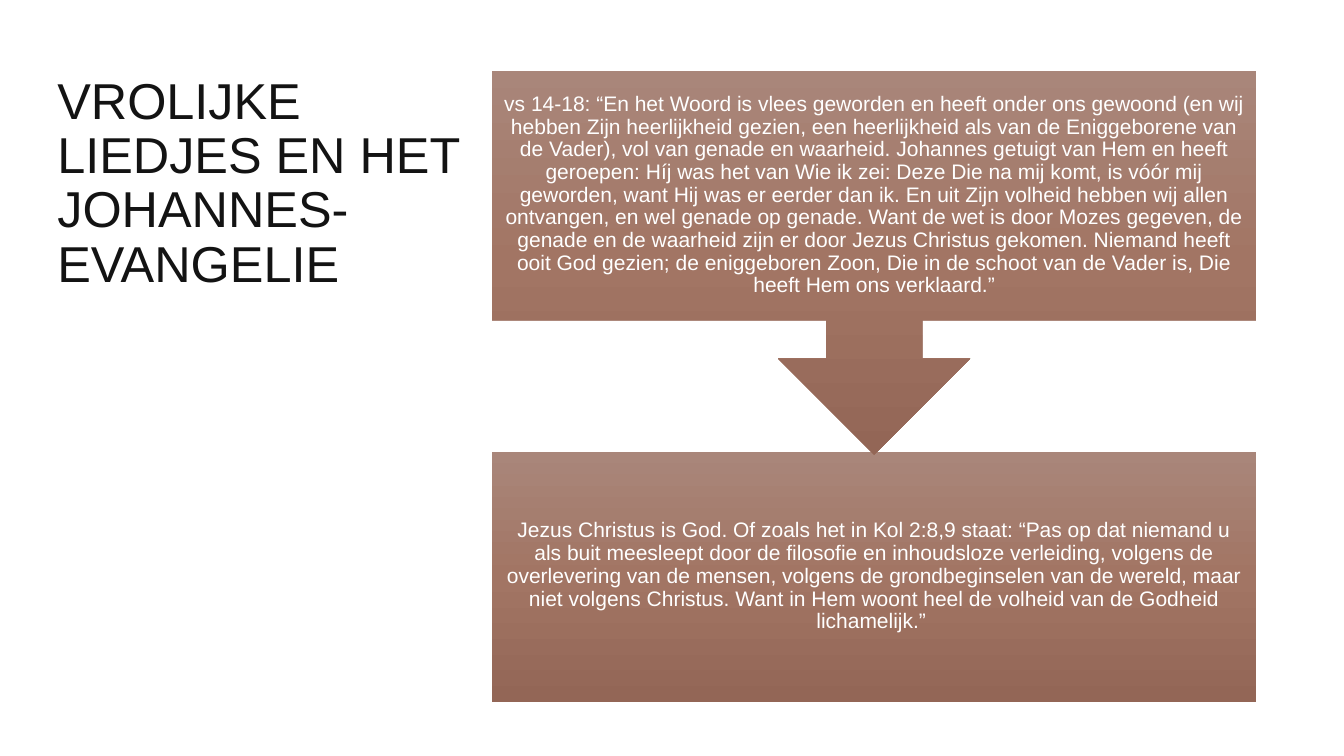
from copy import deepcopy

from pptx import Presentation
from pptx.dml.color import RGBColor
from pptx.enum import shapes, text
from pptx.oxml.ns import qn
from pptx.util import Inches, Pt

COLORS = {"title": "131313", "text": "FFFFFF",
          "light": "A9867A", "mid": "A27564", "dark": "936656"}

prs = Presentation()
prs.slide_width, prs.slide_height = Inches(13.33), Inches(7.5)
s = prs.slides.add_slide(prs.slide_layouts[6])


def write(tf, words, size, color, align):
    tf.word_wrap = True
    p = tf.paragraphs[0]
    p.text = words
    p.alignment = align
    p.line_spacing = 0.9
    p.font.name = "Arial"
    p.font.size = Pt(size)
    p.font.color.rgb = RGBColor.from_string(COLORS[color])


# Title
title = s.shapes.add_textbox(Inches(0.47), Inches(0.7), Inches(4.41), Inches(3.96))
write(title.text_frame, "VROLIJKE LIEDJES EN HET JOHANNES-EVANGELIE",
      36, "title", text.PP_ALIGN.LEFT)

# Bible passage, with an arrow pointing down to the conclusion; the arrow lies on top
passage = (
    "vs 14-18: “En het Woord is vlees geworden en heeft onder ons gewoond "
    "(en wij hebben Zijn heerlijkheid gezien, een heerlijkheid als van de "
    "Eniggeborene van de Vader), vol van genade en waarheid. Johannes getuigt "
    "van Hem en heeft geroepen: Híj was het van Wie ik zei: Deze Die na mij "
    "komt, is vóór mij geworden, want Hij was er eerder dan ik. En uit Zijn "
    "volheid hebben wij allen ontvangen, en wel genade op genade. Want de wet "
    "is door Mozes gegeven, de genade en de waarheid zijn er door Jezus "
    "Christus gekomen. Niemand heeft ooit God gezien; de eniggeboren Zoon, Die "
    "in de schoot van de Vader is, Die heeft Hem ons verklaard.”")
conclusion = (
    "Jezus Christus is God. Of zoals het in Kol 2:8,9 staat: “Pas op dat "
    "niemand u als buit meesleept door de filosofie en inhoudsloze verleiding, "
    "volgens de overlevering van de mensen, volgens de grondbeginselen van de "
    "wereld, maar niet volgens Christus. Want in Hem woont heel de volheid van "
    "de Godheid lichamelijk.” ")
blocks = [
    (shapes.MSO_SHAPE.RECTANGLE, 4.48, 2.48, conclusion),
    (shapes.MSO_SHAPE.DOWN_ARROW_CALLOUT, 0.7, 3.81, passage),
]
for kind, top, height, words in blocks:
    sp = s.shapes.add_shape(kind, Inches(4.88), Inches(top), Inches(7.58), Inches(height))
    sp.shadow.inherit = False
    sp.line.fill.background()

    # Three-stop gradient, running from top to bottom
    sp.fill.gradient()
    sp.fill.gradient_angle = 270
    stop_list = next(sp._element.iter(qn("a:gsLst")))
    stop_list.insert(1, deepcopy(stop_list[0]))
    for stop, position, name in zip(sp.fill.gradient_stops, (0, 0.5, 1),
                                    ("light", "mid", "dark")):
        stop.position = position
        stop.color.rgb = RGBColor.from_string(COLORS[name])

    tf = sp.text_frame
    tf.margin_left = tf.margin_right = tf.margin_top = tf.margin_bottom = Inches(0.12)
    tf.vertical_anchor = text.MSO_ANCHOR.MIDDLE
    write(tf, words, 15, "text", text.PP_ALIGN.CENTER)

prs.save("out.pptx")
